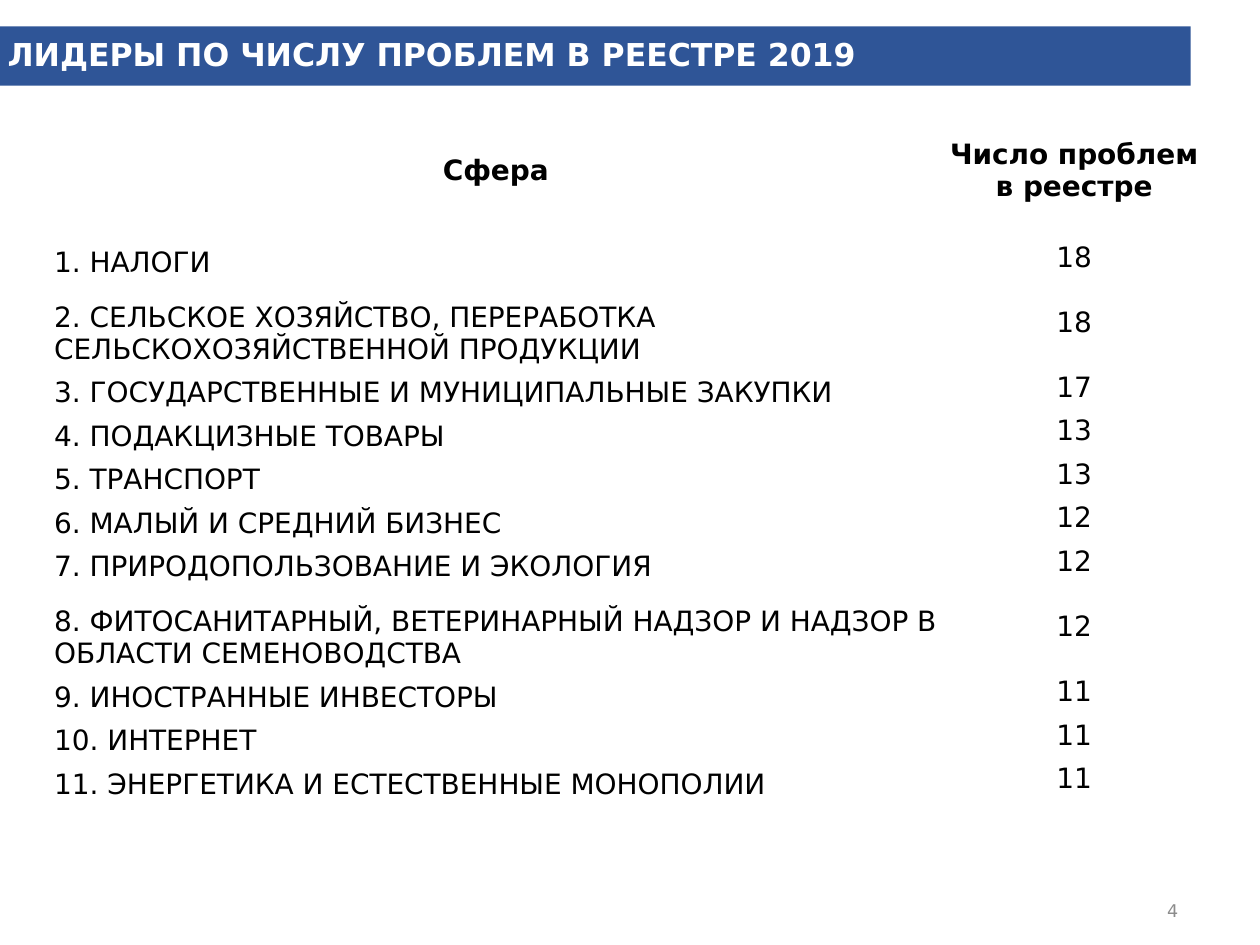
from dataclasses import dataclass

from pptx import Presentation, util as u
from pptx.dml.color import RGBColor
from pptx.enum import shapes, text


@dataclass(frozen=True)
class Theme:
    font: str = "DejaVu Sans"
    band: str = "2F5597"
    title: str = "FFFFFF"
    body: str = "000000"
    muted: str = "8C8C8C"
    title_size: int = 18
    body_size: int = 16
    number_size: int = 10
    gap: int = 6


class SlideBuilder:
    COLUMNS, ROWS = 100, 75

    def __init__(self, presentation, theme):
        self.theme = theme
        self.column = presentation.slide_width / self.COLUMNS
        self.row = presentation.slide_height / self.ROWS
        self.slide = presentation.slides.add_slide(presentation.slide_layouts[5])

    def box(self, left, top, width, height):
        return (u.Emu(round(left * self.column)), u.Emu(round(top * self.row)),
                u.Emu(round(width * self.column)), u.Emu(round(height * self.row)))

    def set_text(self, frame, content, size, color, bold=False, align=text.PP_ALIGN.LEFT):
        frame.text = content
        frame.word_wrap = True
        paragraph = frame.paragraphs[0]
        paragraph.alignment = align
        font = paragraph.font
        font.name, font.size, font.bold = self.theme.font, u.Pt(size), bold
        font.color.rgb = RGBColor.from_string(color)
        return paragraph

    def band(self, *area):
        shape = self.slide.shapes.add_shape(shapes.MSO_SHAPE.RECTANGLE, *self.box(*area))
        shape.shadow.inherit = False
        shape.fill.solid()
        shape.fill.fore_color.rgb = RGBColor.from_string(self.theme.band)
        shape.line.fill.background()
        self.slide.shapes.title._element.addprevious(shape._element)

    def title(self, content, *area):
        shape = self.slide.shapes.title
        shape.left, shape.top, shape.width, shape.height = self.box(*area)
        frame = shape.text_frame
        frame.auto_size = text.MSO_AUTO_SIZE.NONE
        frame.vertical_anchor = text.MSO_ANCHOR.MIDDLE
        self.set_text(frame, content, self.theme.title_size, self.theme.title, bold=True)

    def page_number(self, content, *area):
        frame = self.slide.shapes.add_textbox(*self.box(*area)).text_frame
        frame.vertical_anchor = text.MSO_ANCHOR.MIDDLE
        self.set_text(frame, content, self.theme.number_size, self.theme.muted,
                      align=text.PP_ALIGN.RIGHT)

    def cell(self, cell, content, heading, centered):
        cell.fill.background()
        cell.margin_left = cell.margin_right = cell.margin_top = cell.margin_bottom = 0
        middle = heading or centered
        cell.vertical_anchor = text.MSO_ANCHOR.MIDDLE if middle else text.MSO_ANCHOR.BOTTOM
        paragraph = self.set_text(cell.text_frame, content, self.theme.body_size,
                                  self.theme.body, bold=heading,
                                  align=text.PP_ALIGN.CENTER if middle else text.PP_ALIGN.LEFT)
        paragraph.space_before = paragraph.space_after = u.Pt(self.theme.gap)

    def table(self, records, widths, heights, left, top):
        area = self.box(left, top, sum(widths), sum(heights))
        table = self.slide.shapes.add_table(len(records), len(widths), *area).table
        table.first_row = table.horz_banding = False
        for column, width in zip(table.columns, widths):
            column.width = u.Emu(round(width * self.column))
        for index, (record, height) in enumerate(zip(records, heights)):
            table.rows[index].height = u.Emu(round(height * self.row))
            for position, content in enumerate(record):
                self.cell(table.cell(index, position), content, index == 0, position > 0)


HEADINGS = ("Сфера", "Число проблем в реестре")
LEADERS = [
    ("НАЛОГИ", 18, 1),
    ("СЕЛЬСКОЕ ХОЗЯЙСТВО, ПЕРЕРАБОТКА СЕЛЬСКОХОЗЯЙСТВЕННОЙ ПРОДУКЦИИ", 18, 2),
    ("ГОСУДАРСТВЕННЫЕ И МУНИЦИПАЛЬНЫЕ ЗАКУПКИ", 17, 1),
    ("ПОДАКЦИЗНЫЕ ТОВАРЫ", 13, 1),
    ("ТРАНСПОРТ", 13, 1),
    ("МАЛЫЙ И СРЕДНИЙ БИЗНЕС", 12, 1),
    ("ПРИРОДОПОЛЬЗОВАНИЕ И ЭКОЛОГИЯ", 12, 1),
    ("ФИТОСАНИТАРНЫЙ, ВЕТЕРИНАРНЫЙ НАДЗОР И НАДЗОР В ОБЛАСТИ СЕМЕНОВОДСТВА", 12, 2),
    ("ИНОСТРАННЫЕ ИНВЕСТОРЫ", 11, 1),
    ("ИНТЕРНЕТ", 11, 1),
    ("ЭНЕРГЕТИКА И ЕСТЕСТВЕННЫЕ МОНОПОЛИИ", 11, 1),
]
HEADING_HEIGHT = 10.3
LINE_HEIGHT = 3.45


def main():
    presentation = Presentation()
    presentation.slide_width, presentation.slide_height = u.Inches(10), u.Inches(7.5)
    builder = SlideBuilder(presentation, Theme())
    builder.band(0, 2.1, 94.5, 4.7)
    builder.title("ЛИДЕРЫ ПО ЧИСЛУ ПРОБЛЕМ В РЕЕСТРЕ 2019", -0.4, 1.8, 96.5, 5)
    records = [HEADINGS] + [(f"{rank}. {sphere}", str(count))
                            for rank, (sphere, count, _) in enumerate(LEADERS, 1)]
    heights = [HEADING_HEIGHT] + [LINE_HEIGHT * lines for *_, lines in LEADERS]
    builder.table(records, (70.1, 21.7), heights, 4.3, 8.4)
    builder.page_number("4", 85.8, 69.5, 8.7, 5.5)
    presentation.save("out.pptx")


if __name__ == "__main__":
    main()
